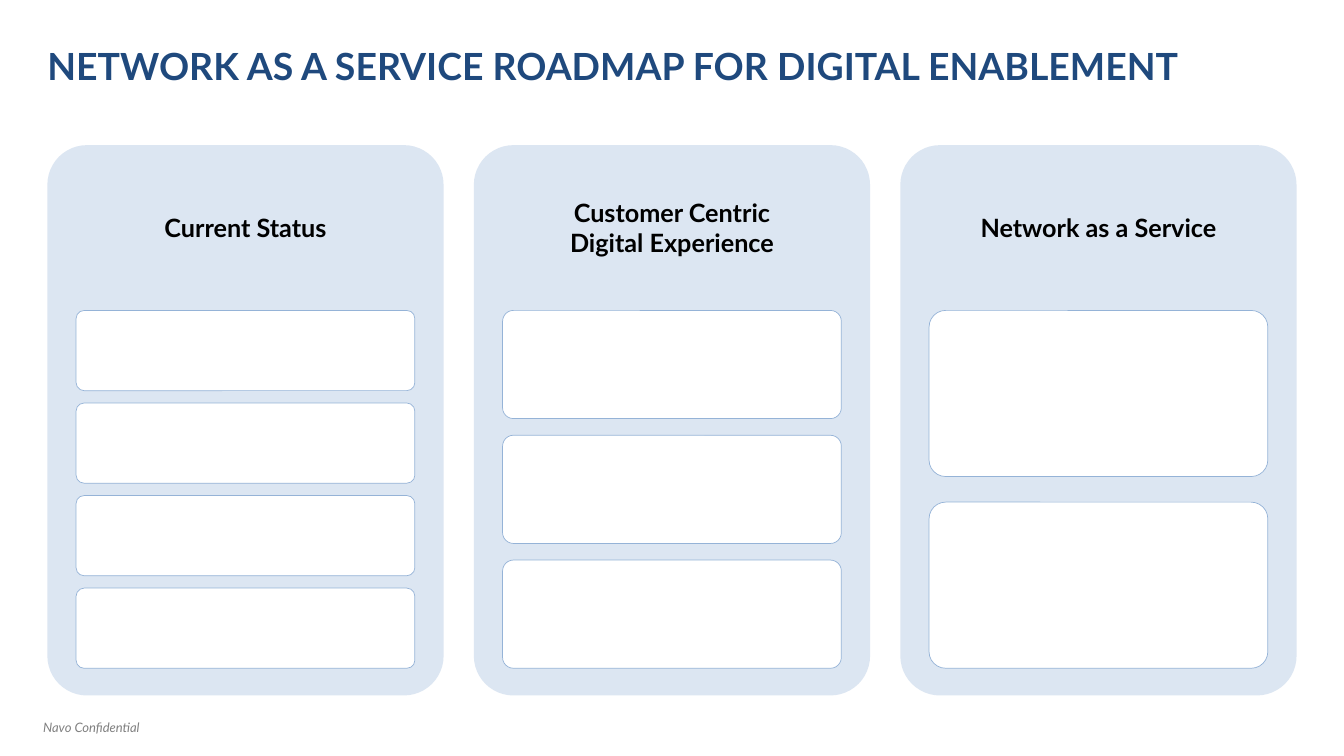
from pptx import Presentation
from pptx.dml.color import RGBColor
from pptx.enum.shapes import MSO_SHAPE
from pptx.enum.text import MSO_ANCHOR, PP_ALIGN
from pptx.util import Inches, Pt

NAVY = RGBColor(0x1F, 0x49, 0x7D)
PALE_BLUE = RGBColor(0xDC, 0xE6, 0xF2)
EDGE_BLUE = RGBColor(0x95, 0xB3, 0xD7)
WHITE = RGBColor(0xFF, 0xFF, 0xFF)
BLACK = RGBColor(0, 0, 0)
GRAY = RGBColor(0x80, 0x80, 0x80)

TITLE_FORMAT = {"size": Pt(26.7), "bold": True}
HEADING_FORMAT = {"size": Pt(18), "bold": True}
FOOTER_FORMAT = {"size": Pt(9.3), "italic": True}

STAGES = [
    (["Current Status"], 4),
    (["Customer Centric", "Digital Experience"], 3),
    (["Network as a Service"], 2),
]
PANEL_WIDTH = 3.93
PANEL_PITCH = 4.23
HEADING_HEIGHT = 1.64
CARD_INSET = 0.285
CARDS_HEIGHT = 3.55
GAP_RATIO = 0.154


def add_text(page, bounds, lines, font_format, color, insets,
             align=PP_ALIGN.LEFT, anchor=MSO_ANCHOR.MIDDLE):
    box = page.shapes.add_textbox(*map(Inches, bounds))
    frame = box.text_frame
    frame.word_wrap = True
    frame.vertical_anchor = anchor
    for side, inset in zip(("left", "top", "right", "bottom"), insets):
        setattr(frame, f"margin_{side}", Inches(inset))
    for index, line in enumerate(lines):
        para = frame.add_paragraph() if index else frame.paragraphs[0]
        para.alignment = align
        span = para.add_run()
        span.text = line
        span.font.name = "Lato"
        span.font.color.rgb = color
        for name, value in font_format.items():
            setattr(span.font, name, value)


def add_rounded(page, bounds, fill, edge=None):
    shape = page.shapes.add_shape(MSO_SHAPE.ROUNDED_RECTANGLE, *map(Inches, bounds))
    shape.adjustments[0] = 0.1
    shape.shadow.inherit = False
    shape.fill.solid()
    shape.fill.fore_color.rgb = fill
    if edge is None:
        shape.line.fill.background()
    else:
        shape.line.color.rgb = edge
        shape.line.width = Pt(0.5)


def add_stage(page, bounds, heading, card_count):
    left, top, width, height = bounds
    add_rounded(page, bounds, PALE_BLUE)
    add_text(page, (left, top, width, HEADING_HEIGHT), heading,
             HEADING_FORMAT, BLACK, [0.07] * 4, PP_ALIGN.CENTER)
    card_height = CARDS_HEIGHT / (card_count + (card_count - 1) * GAP_RATIO)
    for index in range(card_count):
        card_top = top + HEADING_HEIGHT + index * card_height * (1 + GAP_RATIO)
        add_rounded(page, (left + CARD_INSET, card_top, width - 2 * CARD_INSET, card_height),
                    WHITE, EDGE_BLUE)


def add_roadmap(page, bounds):
    left, top, height = bounds
    for index, (heading, card_count) in enumerate(STAGES):
        add_stage(page, (left + index * PANEL_PITCH, top, PANEL_WIDTH, height),
                  heading, card_count)


def add_title(page, bounds):
    add_text(page, bounds, ["NETWORK AS A SERVICE ROADMAP FOR DIGITAL ENABLEMENT"],
             TITLE_FORMAT, NAVY, (0, 0.05, 0.1, 0.05))


def add_footer(page, bounds):
    add_text(page, bounds, ["Navo Confidential"], FOOTER_FORMAT, GRAY,
             (0.1, 0.05, 0.1, 0.05), anchor=MSO_ANCHOR.TOP)


def main():
    deck = Presentation()
    deck.slide_width = Inches(13.33)
    deck.slide_height = Inches(7.5)
    page = deck.slides.add_slide(deck.slide_layouts[6])
    add_footer(page, (0.33, 7.09, 1.95, 0.26))
    add_title(page, (0.47, 0.37, 12.65, 0.55))
    add_roadmap(page, (0.47, 1.44, 5.46))
    deck.save("out.pptx")


if __name__ == "__main__":
    main()
